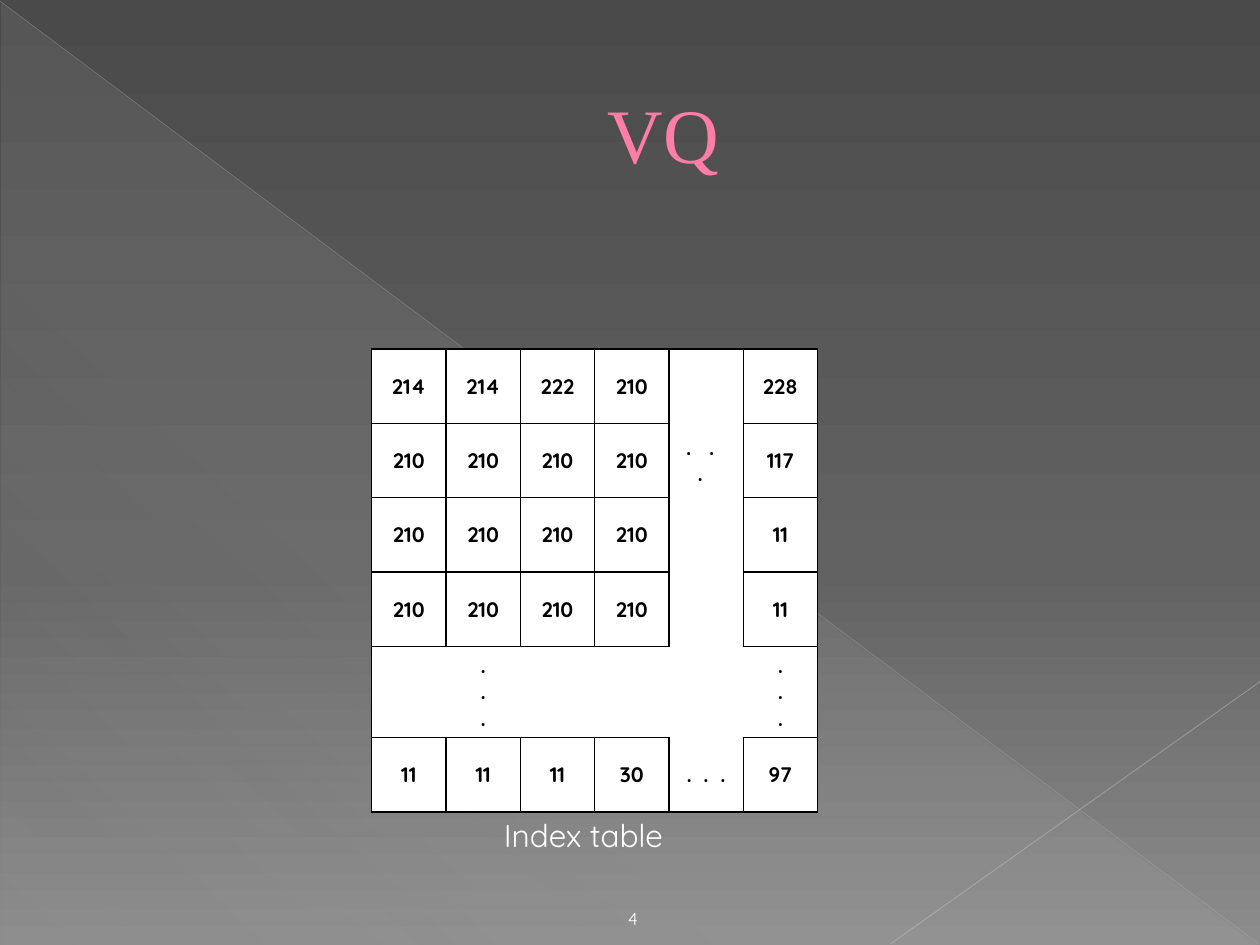
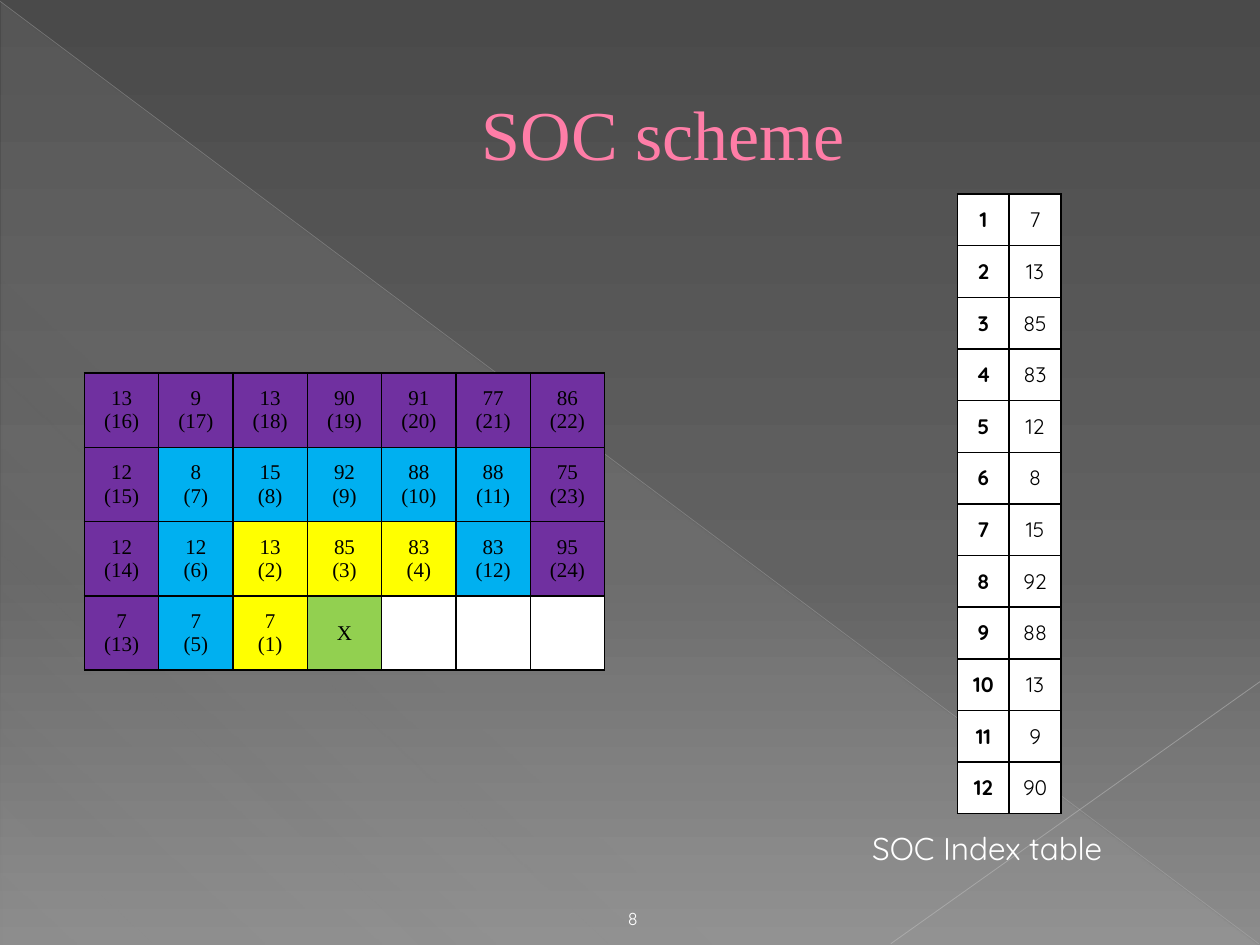
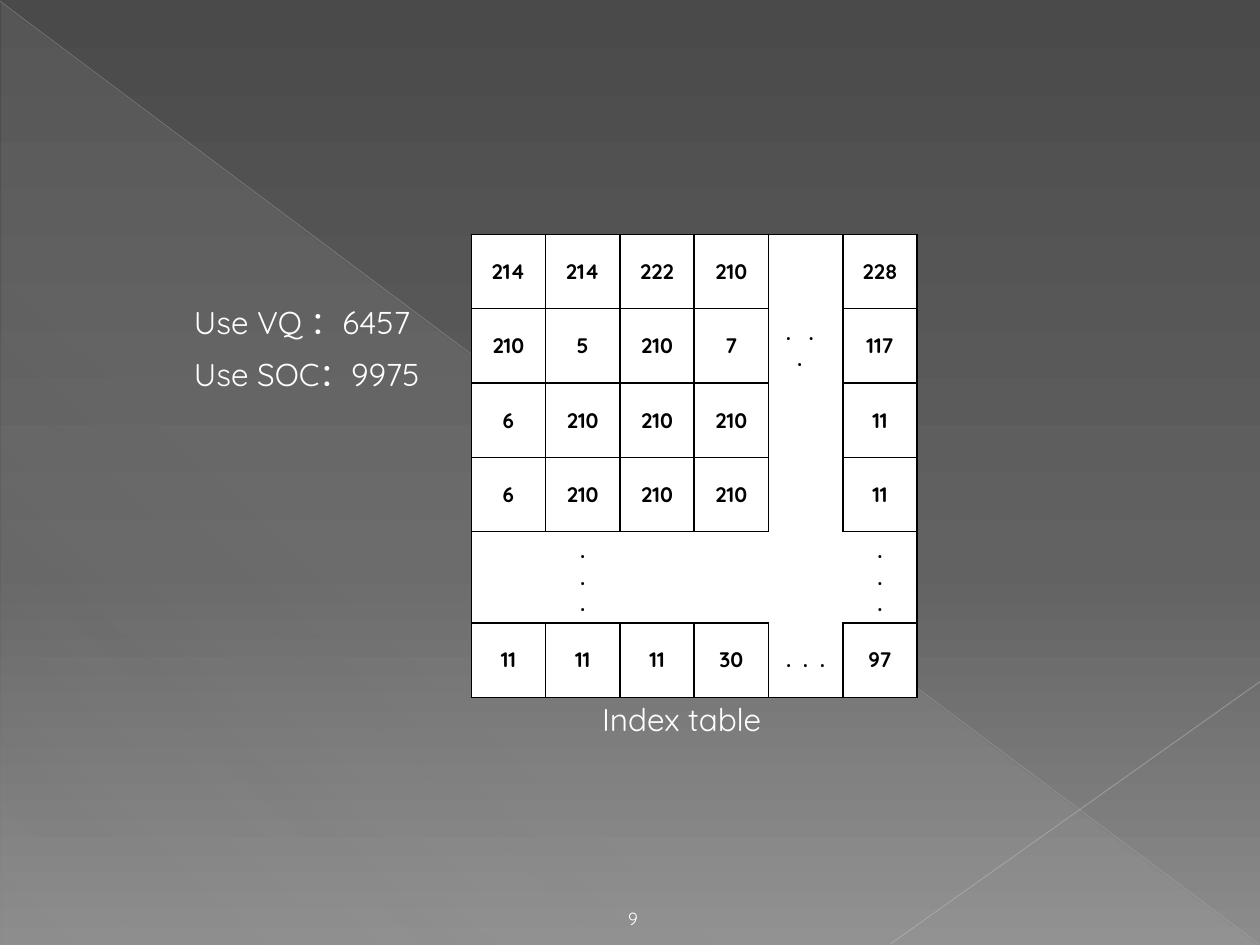
from pptx import Presentation
from pptx.util import Inches, Pt
from pptx.dml.color import RGBColor as RGB
from pptx.enum.shapes import MSO_CONNECTOR as LINK, MSO_SHAPE as SHAPE
from pptx.enum.text import MSO_ANCHOR as ANCHOR, PP_ALIGN as ALIGN
from pptx.oxml import parse_xml
from pptx.oxml.ns import nsdecls, qn
from lxml.etree import SubElement

WHITE = RGB(0xFF, 0xFF, 0xFF)
BLACK = RGB(0, 0, 0)
PINK = RGB(0xFF, 0x7D, 0xA7)
ROSE = RGB(0xB1, 0x27, 0x61)
DARK = RGB(0x4A, 0x4A, 0x4A)
GREY = RGB(0x62, 0x62, 0x62)
LIGHT = RGB(0x8C, 0x8C, 0x8C)
MIST = RGB(0xD2, 0xD2, 0xD2)
SILVER = RGB(0xBF, 0xBF, 0xBF)
ASH = RGB(0xC6, 0xC6, 0xC6)
GREEN = RGB(0x92, 0xD0, 0x50)
YELLOW = RGB(0xFF, 0xFF, 0)
BLUE = RGB(0, 0xB0, 0xF0)
PURPLE = RGB(0x70, 0x30, 0xA0)
SANS, SERIF = "Quicksand", "Times New Roman"
CELL, SLOT = 0.59, 0.41
SIDES = {"lnL": (0, -1), "lnR": (0, 1), "lnT": (-1, 0), "lnB": (1, 0)}


def write(frame, text, size, face=SANS, color=WHITE, align=ALIGN.LEFT, bold=False):
    frame.text = text
    for para in frame.paragraphs:
        para.alignment = align
        font = para.font
        font.name, font.size, font.bold = face, Pt(size), bold
        font.color.rgb = color


def grid(slide, rows, left, top, size, tint, face=SANS, bold=(), gaps=()):
    deep, wide = len(rows), len(rows[0])
    table = slide.shapes.add_table(deep, wide, Inches(left), Inches(top),
                                   Inches(size * wide), Inches(size * deep)).table
    table.first_row = table.horz_banding = False
    for part in [*table.rows]:
        part.height = Inches(size)
    for part in [*table.columns]:
        part.width = Inches(size)
    for r, row in enumerate(rows):
        for c, text in enumerate(row):
            cell = table.cell(r, c)
            write(cell.text_frame, text, 12, face, BLACK, ALIGN.CENTER, c in bold)
            cell.vertical_anchor = ANCHOR.MIDDLE
            for side, (down, over) in SIDES.items():
                bare = (r, c) in gaps and (r + down, c + over) in gaps
                ink = "<a:noFill/>" if bare else f'<a:solidFill><a:srgbClr val="{BLACK}"/></a:solidFill>'
                cell._tc.get_or_add_tcPr().append(
                    parse_xml(f'<a:{side} {nsdecls("a")} w="12700">{ink}</a:{side}>'))
            cell.fill.solid()
            cell.fill.fore_color.rgb = tint(r, c)


prs = Presentation()
prs.slide_width, prs.slide_height = Inches(10), Inches(7.5)
bare, titled = prs.slide_layouts[6], prs.slide_layouts[5]
vq, soc, cost = [prs.slides.add_slide(kind) for kind in (titled, titled, bare)]

master = prs.slide_master
wedge = vq.shapes.add_shape(SHAPE.RIGHT_TRIANGLE, Inches(0.01), Inches(0.02),
                            Inches(9.98), Inches(7.48))
wedge.shadow.inherit = False
wedge.line.fill.background()
for fill, owner, angle, stops in (
        (master.background.fill, master._element, 90,
         [(0, DARK, 100), (60, GREY, 100), (100, LIGHT, 100)]),
        (wedge.fill, wedge._element, 133,
         [(0, MIST, 10), (70, MIST, 8), (100, MIST, 1)])):
    fill.gradient()
    fill.gradient_angle = 360 - angle
    ramp = owner.xpath(".//a:gsLst")[0]
    for stop in [*ramp]:
        ramp.remove(stop)
    for place, color, alpha in stops:
        stop = SubElement(ramp, qn("a:gs"), pos=str(place * 1000))
        tone = SubElement(stop, qn("a:srgbClr"), val=str(color))
        SubElement(tone, qn("a:alpha"), val=str(alpha * 1000))

decor = [wedge]
for ends, color, width, alpha in (((0, 0.01, 9.99, 7.49), SILVER, 0.39, 35),
                                  ((10, 5.41, 7.07, 7.49), ASH, 0.47, 45)):
    ray = vq.shapes.add_connector(LINK.STRAIGHT, *[Inches(n) for n in ends])
    ray.line.width = Pt(width)
    ray.line.color.rgb = color
    tone = ray._element.xpath(".//a:ln//a:srgbClr")[0]
    SubElement(tone, qn("a:alpha"), val=str(alpha * 1000))
    SubElement(ray._element.spPr, qn("a:effectLst"))
    decor.append(ray)
for n, shape in enumerate(decor):
    shape._element.xpath(".//p:cNvPr")[0].set("id", str(20 + n))
    master.shapes._spTree.insert(2 + n, shape._element)

for slide, text, size in ((vq, "VQ", 44), (soc, "SOC scheme", 40)):
    title = slide.shapes.title
    title.left, title.top = Inches(0.5), Inches(0.29)
    title.width, title.height = Inches(9), Inches(1.53)
    frame = title.text_frame
    frame.vertical_anchor = ANCHOR.MIDDLE
    write(frame, text, size, SERIF, PINK, ALIGN.CENTER)
    para = frame.paragraphs[0]
    props = para._p.get_or_add_pPr()
    props.set("marL", str(Inches(0.53)))
    props.set("indent", "0")
    para.runs[0]._r.get_or_add_rPr().insert(0, parse_xml(
        f'<a:ln {nsdecls("a")} w="6350"><a:solidFill><a:srgbClr val="{ROSE}"/></a:solidFill></a:ln>'))

dots = ".\n.\n."
tail = ["", dots, "", "", "", dots], ["11", "11", "11", "30", ".  .  .", "97"]
head = ["214", "214", "222", "210", "", "228"]
plain = [head,
         ["210", "210", "210", "210", ".   .   .  ", "117"],
         ["210", "210", "210", "210", "", "11"],
         ["210", "210", "210", "210", "", "11"], *tail]
coded = [head,
         ["210", "5", "210", "7", ".   .   .  ", "117"],
         ["6", "210", "210", "210", "", "11"],
         ["6", "210", "210", "210", "", "11"], *tail]
gaps = {(r, c) for r in range(6) for c in range(6) if 4 in (r, c)}
for slide, rows, left, top in ((vq, plain, 2.95, 2.77), (cost, coded, 3.74, 1.86)):
    grid(slide, rows, left, top, CELL, lambda r, c: WHITE, bold=range(6), gaps=gaps)

found = "7 13 85 83 12 8 15 92 88 13 9 90".split()
grid(soc, [(str(n), value) for n, value in enumerate(found, 1)], 7.6, 1.54, SLOT,
     lambda r, c: WHITE, bold=[0])

rings = [GREEN, YELLOW, BLUE, PURPLE]
near = ["13(16) 9(17) 13(18) 90(19) 91(20) 77(21) 86(22)",
        "12(15) 8(7) 15(8) 92(9) 88(10) 88(11) 75(23)",
        "12(14) 12(6) 13(2) 85(3) 83(4) 83(12) 95(24)",
        "7(13) 7(5) 7(1) X"]
near = [row.replace("(", "\n(").split(" ") for row in near]
near[3] += [""] * 3
grid(soc, near, 0.67, 2.96, CELL,
     lambda r, c: rings[max(3 - r, abs(c - 3))] if near[r][c] else WHITE, SERIF)

for slide, text, left, top, width, align in (
        (vq, "Index table", 3.9, 6.43, 1.65, ALIGN.LEFT),
        (soc, "SOC Index table", 6.53, 6.53, 2.61, ALIGN.CENTER),
        (cost, "Index table", 4.68, 5.51, 1.65, ALIGN.LEFT),
        (cost, "Use VQ ：6457", 1.44, 2.36, 3.78, ALIGN.LEFT),
        (cost, "Use SOC：9975", 1.44, 2.77, 3.78, ALIGN.LEFT)):
    frame = slide.shapes.add_textbox(Inches(left), Inches(top), Inches(width), Inches(0.4)).text_frame
    frame.word_wrap = True
    write(frame, text, 18, align=align)

for slide, page in ((vq, "4"), (soc, "8"), (cost, "9")):
    frame = slide.shapes.add_textbox(Inches(0.5), Inches(7.09), Inches(4.66), Inches(0.33)).text_frame
    frame.word_wrap = True
    frame.vertical_anchor = ANCHOR.BOTTOM
    write(frame, page, 10, align=ALIGN.RIGHT)

prs.save("out.pptx")
